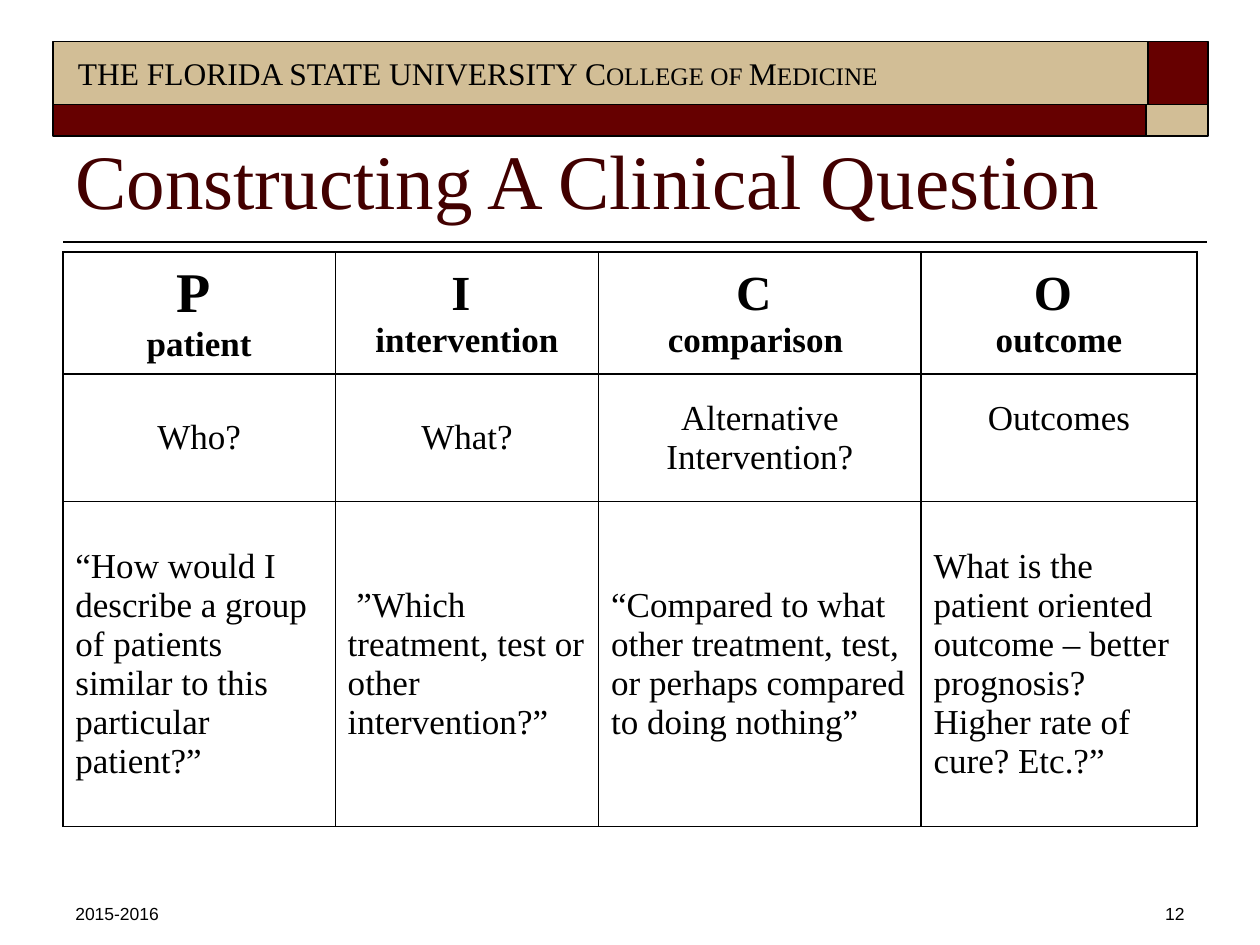
from dataclasses import dataclass
from typing import Any, NamedTuple

from lxml.etree import SubElement
from pptx import Presentation
from pptx.dml.color import RGBColor
from pptx.enum.shapes import MSO_CONNECTOR, MSO_SHAPE
from pptx.enum.text import MSO_ANCHOR, PP_ALIGN
from pptx.oxml.ns import qn
from pptx.util import Cm, Pt


@dataclass(frozen=True)
class Theme:
    garnet: RGBColor = RGBColor(0x66, 0x00, 0x00)
    gold: RGBColor = RGBColor(0xD2, 0xBE, 0x96)
    heading: RGBColor = RGBColor(0x42, 0x00, 0x00)
    ink: RGBColor = RGBColor(0x00, 0x00, 0x00)
    serif: str = "Times New Roman"
    sans: str = "Arial"
    title_size: int = 44
    banner_size: int = 18
    patient_size: int = 32
    letter_size: int = 28
    body_size: int = 20
    footer_size: int = 10
    stroke: int = 1


THEME = Theme()


class Box(NamedTuple):
    left: float
    top: float
    width: float
    height: float

    def lengths(self) -> list[Cm]:
        return [Cm(value) for value in self]


class Band(NamedTuple):
    box: Box
    color: RGBColor


class Span(NamedTuple):
    text: str
    size: int = THEME.body_size
    bold: bool = False
    color: RGBColor = THEME.ink
    face: str = THEME.serif
    small_caps: bool = False


class Label(NamedTuple):
    box: Box
    spans: list[Span]
    align: PP_ALIGN = PP_ALIGN.LEFT
    anchor: MSO_ANCHOR = MSO_ANCHOR.TOP
    wrap: bool = True


class PicoColumn(NamedTuple):
    width: float
    letter: Span
    name: str
    prompt: list[str]
    question: str


def apply_formats(target: Any, formats: dict[str, Any]) -> None:
    for attribute, value in formats.items():
        setattr(target, attribute, value)


def add_span(paragraph: Any, span: Span) -> None:
    run = paragraph.add_run()
    run.text = span.text
    apply_formats(run.font, {"name": span.face, "size": Pt(span.size), "bold": span.bold})
    run.font.color.rgb = span.color
    if span.small_caps:
        run._r.get_or_add_rPr().set("cap", "small")


def draw_band(slide: Any, band: Band) -> None:
    bar = slide.shapes.add_shape(MSO_SHAPE.RECTANGLE, *band.box.lengths())
    bar.shadow.inherit = False
    bar.fill.solid()
    bar.fill.fore_color.rgb = band.color
    bar.line.color.rgb = THEME.ink
    bar.line.width = Pt(THEME.stroke)


def draw_rule(slide: Any, left: float, right: float, top: float) -> None:
    rule = slide.shapes.add_connector(
        MSO_CONNECTOR.STRAIGHT, Cm(right), Cm(top), Cm(left), Cm(top)
    )
    rule.line.color.rgb = THEME.ink
    rule.line.width = Pt(THEME.stroke)
    SubElement(rule._element.spPr, qn("a:effectLst"))


def draw_label(slide: Any, label: Label) -> None:
    frame = slide.shapes.add_textbox(*label.box.lengths()).text_frame
    apply_formats(frame, {"word_wrap": label.wrap, "vertical_anchor": label.anchor})
    paragraph = frame.paragraphs[0]
    paragraph.alignment = label.align
    for span in label.spans:
        add_span(paragraph, span)


def style_cell(cell: Any) -> None:
    properties = cell._tc.get_or_add_tcPr()
    for side in ("a:lnL", "a:lnR", "a:lnT", "a:lnB"):
        border = SubElement(properties, qn(side), w=str(Pt(THEME.stroke)))
        fill = SubElement(border, qn("a:solidFill"))
        SubElement(fill, qn("a:srgbClr"), val=str(THEME.ink))
    cell.fill.background()
    apply_formats(cell, {
        "vertical_anchor": MSO_ANCHOR.MIDDLE,
        "margin_left": Cm(0.25), "margin_right": Cm(0.25),
        "margin_top": Cm(0.13), "margin_bottom": Cm(0.13),
    })


def fill_cell(cell: Any, lines: list[str], align: PP_ALIGN) -> None:
    frame = cell.text_frame
    for index, line in enumerate(lines):
        paragraph = frame.add_paragraph() if index else frame.paragraphs[0]
        paragraph.alignment = align
        add_span(paragraph, Span(line))


def draw_pico_table(slide: Any, box: Box, columns: list[PicoColumn], heights: list[float]) -> None:
    table = slide.shapes.add_table(len(heights), len(columns), *box.lengths()).table
    apply_formats(table, {"first_row": False, "horz_banding": False})
    for row, height in zip(table.rows, heights):
        row.height = Cm(height)
    for cell in table.iter_cells():
        style_cell(cell)
    for index, column in enumerate(columns):
        table.columns[index].width = Cm(column.width)
        header, prompt, question = (table.cell(row, index) for row in range(3))
        heading = header.text_frame.paragraphs[0]
        heading.alignment = PP_ALIGN.CENTER
        add_span(heading, column.letter)
        heading.add_line_break()
        add_span(heading, Span(column.name, bold=True))
        fill_cell(prompt, column.prompt, PP_ALIGN.CENTER)
        fill_cell(question, [column.question], PP_ALIGN.LEFT)
    table.cell(1, len(columns) - 1).margin_bottom = Cm(0.91)


BANDS = [
    Band(Box(23.09, 0.84, 1.27, 1.27), THEME.garnet),
    Band(Box(1.07, 0.84, 22.07, 1.27), THEME.gold),
    Band(Box(1.07, 2.11, 22.07, 0.63), THEME.garnet),
    Band(Box(23.11, 2.11, 1.25, 0.63), THEME.gold),
]

LABELS = [
    Label(Box(1.32, 0.97, 17.09, 1.02), [
        Span("THE FLORIDA STATE UNIVERSITY ", THEME.banner_size),
        Span("College of Medicine", THEME.banner_size, small_caps=True),
    ], wrap=False),
    Label(Box(1.27, 1.47, 22.86, 3.18),
          [Span("Constructing A Clinical Question", THEME.title_size, color=THEME.heading)],
          anchor=MSO_ANCHOR.BOTTOM),
    Label(Box(1.27, 18.08, 4.65, 0.53),
          [Span("2015-2016", THEME.footer_size, face=THEME.sans)]),
    Label(Box(18.85, 18.08, 5.28, 0.53),
          [Span("12", THEME.footer_size, face=THEME.sans)], PP_ALIGN.RIGHT),
]

COLUMNS = [
    PicoColumn(5.49, Span("P ", THEME.patient_size, True), "patient", ["Who?"],
               "“How would I describe a group of patients similar to this particular patient?”"),
    PicoColumn(5.31, Span("I ", THEME.letter_size, True), "intervention", ["What?"],
               " ”Which treatment, test or other intervention?”"),
    PicoColumn(6.5, Span("C ", THEME.letter_size, True), "comparison ",
               ["Alternative", "Intervention?"],
               "“Compared to what other treatment, test, or perhaps compared to doing nothing”"),
    PicoColumn(5.56, Span("O ", THEME.letter_size, True), "outcome", ["Outcomes"],
               "What is the patient oriented outcome – better prognosis? "
               "Higher rate of cure? Etc.?”"),
]


def main() -> None:
    deck = Presentation()
    apply_formats(deck, {"slide_width": Cm(25.4), "slide_height": Cm(19.05)})
    slide = deck.slides.add_slide(deck.slide_layouts[6])
    for band in BANDS:
        draw_band(slide, band)
    draw_rule(slide, 1.27, 24.33, 4.88)
    for label in LABELS:
        draw_label(slide, label)
    draw_pico_table(slide, Box(1.27, 5.08, 22.86, 11.58), COLUMNS, [2.46, 2.57, 6.55])
    deck.save("out.pptx")


if __name__ == "__main__":
    main()
